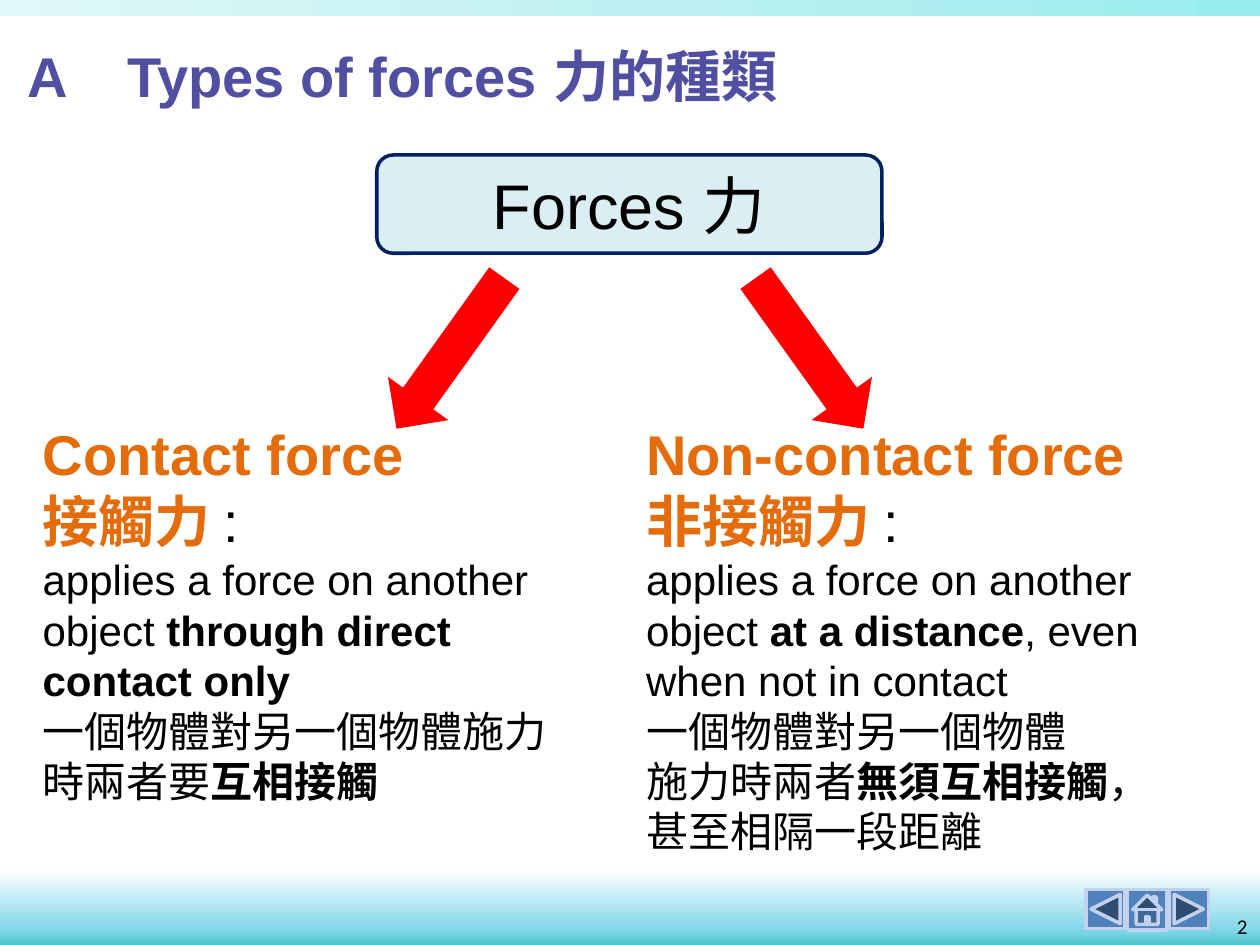
"""Build the slide that sorts forces into contact and non-contact ones."""
from dataclasses import dataclass
from typing import Optional

from lxml.etree import SubElement
from pptx import Presentation
from pptx.dml.color import RGBColor
from pptx.enum.shapes import MSO_SHAPE as Shape
from pptx.enum.text import MSO_ANCHOR as Anchor, PP_ALIGN as Align
from pptx.oxml.ns import qn
from pptx.util import Emu, Inches, Pt

BLACK = RGBColor(0x00, 0x00, 0x00)
PURPLE = RGBColor(0x51, 0x4F, 0xA1)
ORANGE = RGBColor(0xE4, 0x6C, 0x0A)
RED = RGBColor(0xFF, 0x00, 0x00)
PALE_BLUE = RGBColor(0xDB, 0xEE, 0xF4)
NAVY = RGBColor(0x00, 0x20, 0x60)
BUTTON_BLUE = RGBColor(0x4F, 0x81, 0xBD)
BUTTON_EDGE = RGBColor(0xC2, 0xD1, 0xED)
BOTTOM_STOPS = ((0, RGBColor(0x4C, 0xC7, 0xCA)), (19, RGBColor(0x7F, 0xD6, 0xE8)),
                (100, RGBColor(0xFF, 0xFF, 0xFF)))
TOP_STOPS = ((0, RGBColor(0x97, 0xEC, 0xED)), (50, RGBColor(0xC0, 0xF1, 0xF2)),
             (100, RGBColor(0xE0, 0xF8, 0xF8)))
WIDTH, HEIGHT = Inches(10), Inches(7.5)
COLUMNS, ROWS = 100, 75
LATIN, ASIAN = "Arial", "Noto Sans CJK SC"


@dataclass(frozen=True)
class Area:
    """Place and size in grid columns and rows."""
    column: float
    row: float
    columns: float
    rows: float

    def lengths(self) -> tuple:
        """Return left, top, width and height."""
        across, down = WIDTH / COLUMNS, HEIGHT / ROWS
        return (Emu(round(self.column * across)), Emu(round(self.row * down)),
                Emu(round(self.columns * across)), Emu(round(self.rows * down)))


@dataclass(frozen=True)
class Branch:
    """One kind of force: its arrow and its explanation."""
    arrow: Area
    turn: float
    area: Area
    heading: str
    body: tuple


BRANCHES = (
    Branch(Area(32.8, 20.7, 5.9, 14.7), 35.6, Area(2.4, 32.8, 44.9, 32),
           "Contact force\n接觸力 ",
           (("applies a force on another object ", False),
            ("through direct contact only\n", True),
            ("一個物體對另一個物體施力時兩者要", False),
            ("互相接觸", True))),
    Branch(Area(61.3, 20.7, 5.9, 14.7), -35.6, Area(50.3, 32.8, 47.3, 36),
           "Non-contact force\n非接觸力 ",
           (("applies a force on another object ", False),
            ("at a distance", True),
            (", even when not in contact\n一個物體對另一個物體\n施力時兩者", False),
            ("無須互相接觸", True),
            ("，\n甚至相隔一段距離", False))),
)
BUTTONS = (
    (Shape.ACTION_BUTTON_BACK_OR_PREVIOUS, Area(86.2, 70.6, 3.1, 3.1)),
    (Shape.ACTION_BUTTON_HOME, Area(89.5, 70.6, 3.1, 3.2)),
    (Shape.ACTION_BUTTON_FORWARD_OR_NEXT, Area(92.8, 70.6, 3.1, 3.1)),
)


def add_text(para, text: str, *, size: float, color: RGBColor = BLACK,
             bold: bool = False, name: str = LATIN) -> None:
    """Append formatted text, turning each newline into a line break."""
    for index, line in enumerate(text.split("\n")):
        if index:
            para.add_line_break()
        if line:
            span = para.add_run()
            span.text = line
            font = span.font
            font.size, font.bold, font.name = Pt(size), bold, name
            font.color.rgb = color
            SubElement(font._element, qn("a:ea"), typeface=ASIAN)


def add_box(slide, area: Area):
    """Add a wrapping text box and return its text frame."""
    frame = slide.shapes.add_textbox(*area.lengths()).text_frame
    frame.word_wrap = True
    return frame


def add_figure(slide, kind: Shape, area: Area, *, fill: Optional[RGBColor] = None,
               line: Optional[RGBColor] = None, turn: float = 0):
    """Add a preset shape without shadow."""
    figure = slide.shapes.add_shape(kind, *area.lengths())
    figure.shadow.inherit = False
    figure.rotation = turn
    if fill is not None:
        figure.fill.solid()
        figure.fill.fore_color.rgb = fill
    if line is None:
        figure.line.fill.background()
    else:
        figure.line.color.rgb = line
        figure.line.width = Pt(2)
    return figure


def add_band(slide, area: Area, stops: tuple, angle: int) -> None:
    """Add a rectangle with a linear gradient."""
    band = add_figure(slide, Shape.RECTANGLE, area)
    band.fill.gradient()
    band.fill.gradient_angle = angle
    stop_list = band._element.spPr.find(qn("a:gradFill")).find(qn("a:gsLst"))
    for old_stop in list(stop_list):
        stop_list.remove(old_stop)
    for position, color in stops:
        stop = SubElement(stop_list, qn("a:gs"), pos=str(position * 1000))
        SubElement(stop, qn("a:srgbClr"), val=str(color))


def add_frame(slide) -> None:
    """Draw the bands, the navigation buttons and the page number."""
    add_band(slide, Area(0, 69, COLUMNS, 6), BOTTOM_STOPS, 90)
    add_band(slide, Area(0, 0, COLUMNS, 1.3), TOP_STOPS, 180)
    for kind, area in BUTTONS:
        add_figure(slide, kind, area, fill=BUTTON_BLUE, line=BUTTON_EDGE)
    para = add_box(slide, Area(95, 72, 5, 3)).paragraphs[0]
    para.alignment = Align.RIGHT
    add_text(para, "2", size=12, name="Calibri")


def format_title(slide) -> None:
    """Place and fill the title with a hanging section letter."""
    title = slide.shapes.title
    title.left, title.top, title.width, title.height = Area(1.2, 2.8, 96.9, 6.4).lengths()
    title.text_frame.vertical_anchor = Anchor.TOP
    para = title.text_frame.paragraphs[0]
    para.alignment = Align.LEFT
    properties = para._p.get_or_add_pPr()
    properties.set("marL", str(Inches(0.79)))
    properties.set("indent", str(-Inches(0.79)))
    add_text(para, "A\tTypes of forces 力的種類", size=32, color=PURPLE, bold=True)


def add_root(slide) -> None:
    """Draw the rounded box that both arrows leave."""
    box = add_figure(slide, Shape.ROUNDED_RECTANGLE, Area(29.9, 12.3, 40.1, 7.8),
                     fill=PALE_BLUE, line=NAVY)
    box.text_frame.vertical_anchor = Anchor.MIDDLE
    para = box.text_frame.paragraphs[0]
    para.alignment = Align.CENTER
    add_text(para, "Forces 力", size=36)


def add_branch(slide, branch: Branch) -> None:
    """Draw an arrow and the explanation it leads to."""
    add_figure(slide, Shape.DOWN_ARROW, branch.arrow, fill=RED, turn=branch.turn)
    frame = add_box(slide, branch.area)
    heading = frame.paragraphs[0]
    add_text(heading, branch.heading, size=32, color=ORANGE, bold=True)
    add_text(heading, ":", size=32)
    body = frame.add_paragraph()
    for text, bold in branch.body:
        add_text(body, text, size=24, bold=bold)


def main() -> None:
    """Build and save the deck."""
    deck = Presentation()
    deck.slide_width, deck.slide_height = WIDTH, HEIGHT
    slide = deck.slides.add_slide(deck.slide_layouts.get_by_name("Title Only"))
    add_frame(slide)
    format_title(slide)
    add_root(slide)
    for branch in BRANCHES:
        add_branch(slide, branch)
    deck.save("out.pptx")


if __name__ == "__main__":
    main()
